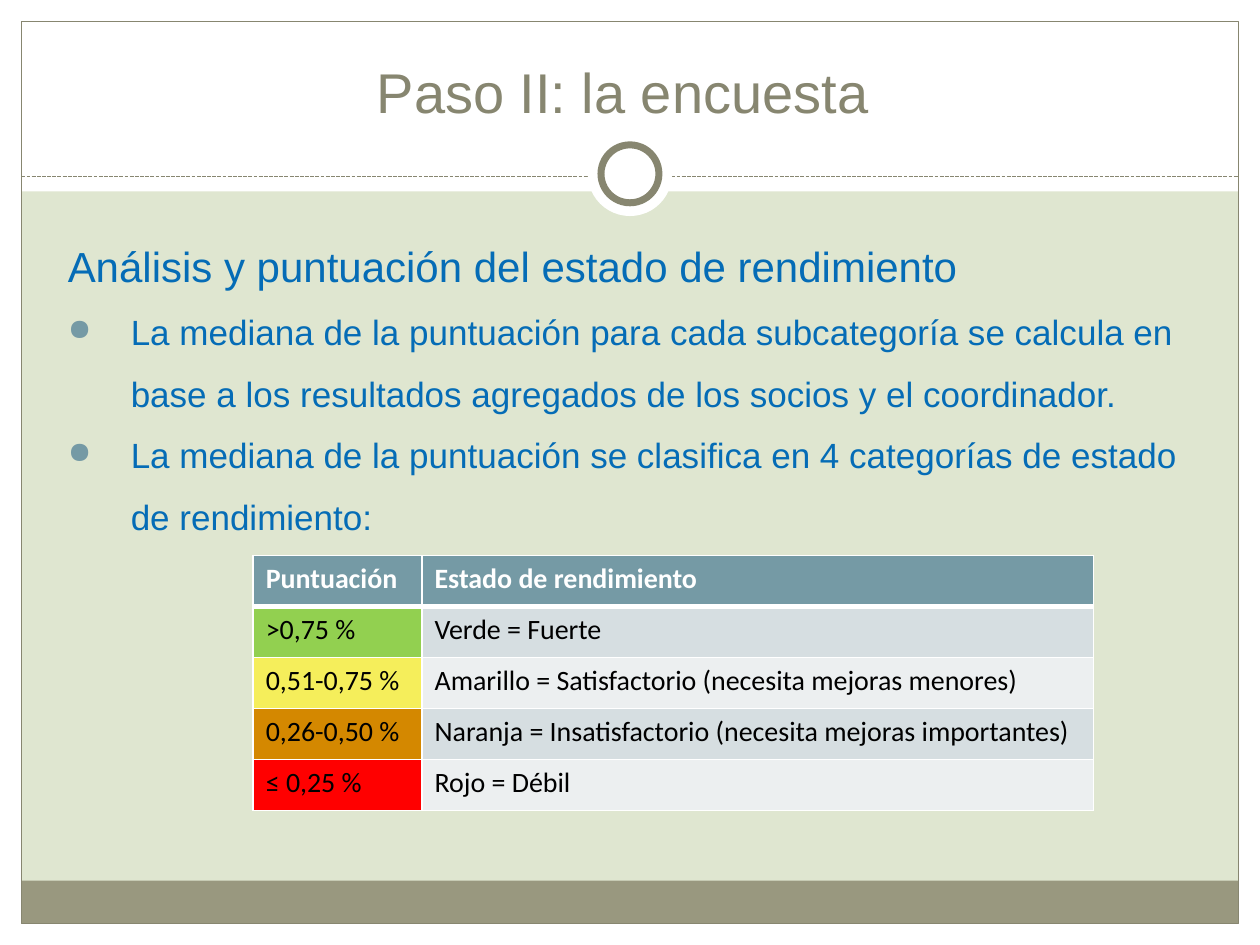
from lxml import etree
from pptx import Presentation
from pptx.dml.color import RGBColor
from pptx.enum.dml import MSO_LINE
from pptx.enum.shapes import MSO_CONNECTOR, MSO_SHAPE
from pptx.enum.text import MSO_ANCHOR, PP_ALIGN
from pptx.oxml import parse_xml
from pptx.util import Inches, Pt

RECT, OVAL = MSO_SHAPE.RECTANGLE, MSO_SHAPE.OVAL
LINE, DASH = MSO_CONNECTOR.STRAIGHT, MSO_LINE.SQUARE_DOT
BOTTOM, TOP, CENTER = MSO_ANCHOR.BOTTOM, MSO_ANCHOR.TOP, PP_ALIGN.CENTER
NS = "http://schemas.openxmlformats.org/drawingml/2006/main"

WIDE, HIGH, EDGE = 10, 7.5, 0.17
INNER = WIDE - 2 * EDGE
WHITE, OLIVE, BLUE, TEAL = "FFFFFF", "878670", "056CB6", "759AA5"

TITLE = "Paso II: la encuesta"
HEAD = "Análisis y puntuación del estado de rendimiento"
POINTS = [
    "La mediana de la puntuación para cada subcategoría se calcula en base a "
    "los resultados agregados de los socios y el coordinador.\u00a0",
    "La mediana de la puntuación se clasifica en 4 categorías de estado de rendimiento:",
]
ROWS = [
    ("Puntuación", "Estado de rendimiento", TEAL),
    (">0,75\u00a0%", "Verde = Fuerte", "92D050"),
    ("0,51-0,75\u00a0%", "Amarillo = Satisfactorio (necesita mejoras menores)", "F5EE5B"),
    ("0,26-0,50\u00a0%", "Naranja = Insatisfactorio (necesita mejoras importantes)", "D48800"),
    ("≤ 0,25\u00a0%", "Rojo = Débil", "FF0000"),
]
BANDS = ["ECEFF0", "D6DEE1"]
COLS, STEP = [1.34, 5.33], 0.405

SHAPES = [
    (RECT, (0, HIGH - EDGE, WIDE, EDGE), WHITE, None),
    (RECT, (0, 0, WIDE, 1.52), WHITE, None),
    (RECT, (0, 0, EDGE, HIGH), WHITE, None),
    (RECT, (WIDE - EDGE, 0, EDGE, HIGH), WHITE, None),
    (RECT, (EDGE, 6.99, INNER, 0.34), "99987F", None),
    (RECT, (EDGE, EDGE, INNER, HIGH - 2 * EDGE), None, 0.75),
]
RINGS = [(0.67, None), (0.46, 4)]
MID = 1.38


def color(code):
    """Turn a hex string into a colour."""
    return RGBColor.from_string(code)


def paint(fill, code):
    """Fill with one colour, or with none."""
    if code:
        fill.solid()
        fill.fore_color.rgb = color(code)
    else:
        fill.background()


def style(font, code, **form):
    """Set a font's colour and format values."""
    font.color.rgb = color(code)
    for key, value in form.items():
        setattr(font, key, value)


def draw(slide, kind, box, code, width):
    """Add a preset shape with an optional outline."""
    shape = slide.shapes.add_shape(kind, *map(Inches, box))
    shape.shadow.inherit = False
    paint(shape.fill, code)
    paint(shape.line.fill, OLIVE if width else None)
    if width:
        shape.line.width = Pt(width)


def rule(slide, y):
    """Add the dashed line under the title."""
    line = slide.shapes.add_connector(
        LINE, *map(Inches, (EDGE, y, WIDE - EDGE, y)))
    line.line.color.rgb = color(OLIVE)
    line.line.width = Pt(0.75)
    line.line.dash_style = DASH
    etree.SubElement(line._element.spPr, f"{{{NS}}}effectLst")


def frame(slide, box, anchor):
    """Add a wrapping text box and return its text frame."""
    text = slide.shapes.add_textbox(*map(Inches, box)).text_frame
    text.word_wrap = True
    text.vertical_anchor = anchor
    return text


def write(para, words, size, code):
    """Add one run of Arial text."""
    run = para.add_run()
    run.text = words
    style(run.font, code, name="Arial", size=Pt(size))


def indent(para, left, hang, mark):
    """Set a paragraph's indent and its bullet."""
    props = para._p.get_or_add_pPr()
    props.set("marL", str(Inches(left)))
    props.set("indent", str(Inches(hang)))
    if mark:
        color_tag = etree.SubElement(props, f"{{{NS}}}buClr")
        etree.SubElement(color_tag, f"{{{NS}}}srgbClr", val=TEAL)
        etree.SubElement(props, f"{{{NS}}}buSzPct", val="85000")
        etree.SubElement(props, f"{{{NS}}}buChar", char=mark)


def border(cell, top, base):
    """Give a cell white borders."""
    props = cell._tc.get_or_add_tcPr()
    for spot, (side, width) in enumerate(zip("LRTB", (1, 1, top, base))):
        props.insert(spot, parse_xml(
            f'<a:ln{side} xmlns:a="{NS}" w="{Pt(width)}"><a:solidFill>'
            f'<a:srgbClr val="{WHITE}"/></a:solidFill></a:ln{side}>'))


def grid(slide):
    """Add the score table."""
    box = (2.01, 4.41, sum(COLS), STEP * len(ROWS))
    table = slide.shapes.add_table(
        len(ROWS), len(COLS), *map(Inches, box)).table
    for col, width in zip(table.columns, COLS):
        col.width = Inches(width)
    for r, (score, state, code) in enumerate(ROWS):
        table.rows[r].height = Inches(STEP)
        fills = (code, BANDS[r % 2] if r else TEAL)
        for c, words in enumerate((score, state)):
            cell = table.cell(r, c)
            cell.text = words
            paint(cell.fill, fills[c])
            style(cell.text_frame.paragraphs[0].runs[0].font,
                  "000000" if r else WHITE,
                  name="Calibri", size=Pt(16), bold=r == 0)
            border(cell, 3 if r == 1 else 1, 1 if r else 3)


def main():
    """Build the slide and save it."""
    deck = Presentation()
    deck.slide_width, deck.slide_height = Inches(WIDE), Inches(HIGH)
    slide = deck.slides.add_slide(deck.slide_layouts[6])
    paint(slide.background.fill, "DFE6D0")
    for item in SHAPES:
        draw(slide, *item)
    rule(slide, 1.4)
    for size, width in RINGS:
        box = ((WIDE - size) / 2, MID - size / 2, size, size)
        draw(slide, OVAL, box, WHITE, width)

    title = frame(slide, (0.28, 0.21, 9.33, 0.83), BOTTOM).paragraphs[0]
    title.alignment = CENTER
    write(title, TITLE, 32, OLIVE)

    body = frame(slide, (0.33, 1.67, 9.3, 5), TOP)
    lines = [(HEAD, 24, 0.11, 0, None)]
    lines += [(words, 20, 0.61, -0.5, "●") for words in POINTS]
    for n, (words, size, left, hang, mark) in enumerate(lines):
        para = body.add_paragraph() if n else body.paragraphs[0]
        para.line_spacing = 1.47
        indent(para, left, hang, mark)
        write(para, words, size, BLUE)
    grid(slide)
    deck.save("out.pptx")


if __name__ == "__main__":
    main()
